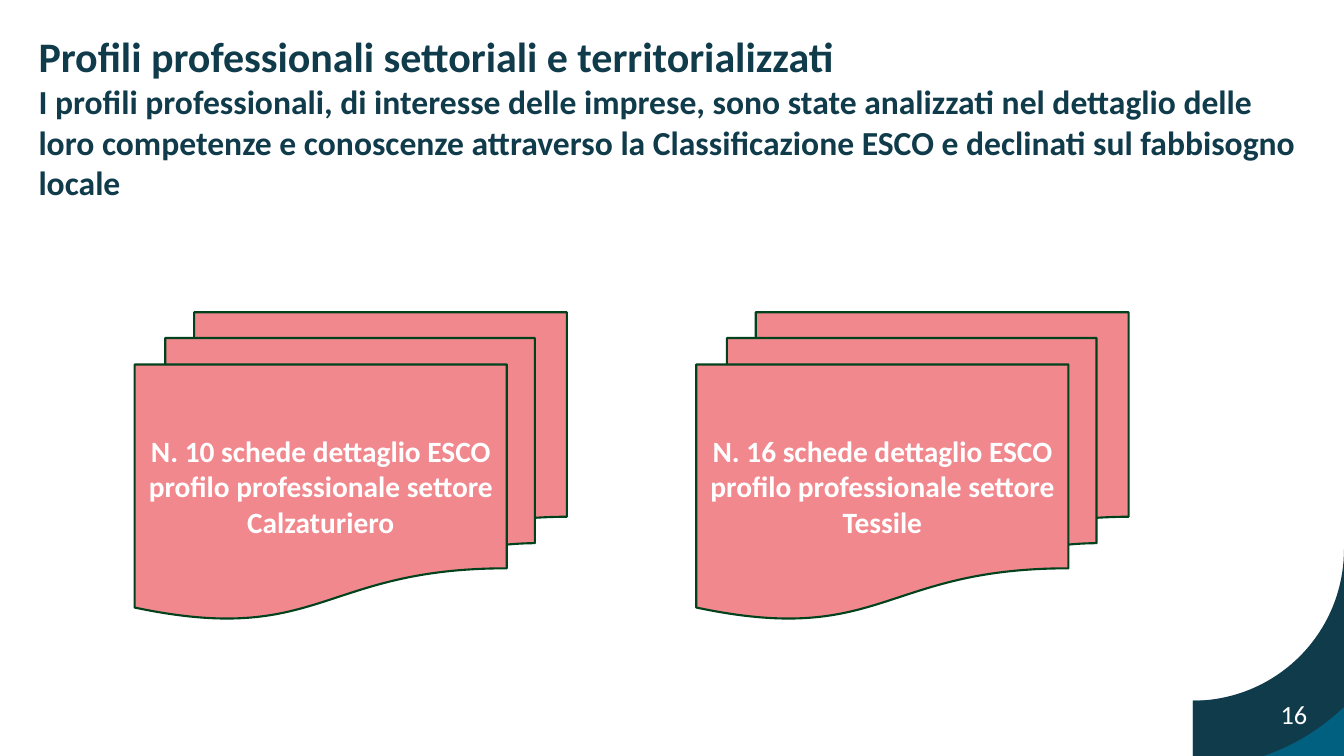
import math
from dataclasses import dataclass

import pptx
import pptx.dml.color
import pptx.enum.shapes
import pptx.enum.text
import pptx.util

Pt = pptx.util.Pt
SHAPES = pptx.enum.shapes.MSO_SHAPE
ALIGN = pptx.enum.text.PP_ALIGN
ANCHOR = pptx.enum.text.MSO_ANCHOR

PAGE_WIDTH, PAGE_HEIGHT = 1280.16, 720


@dataclass(frozen=True)
class Theme:
    font: str = "Calibri"
    navy: str = "103B4B"
    blue: str = "015F80"
    pink: str = "F1888E"
    green: str = "00421C"
    white: str = "FFFFFF"
    title_size: int = 40
    subtitle_size: int = 32
    card_size: int = 28
    number_size: int = 25
    outline: int = 2


THEME = Theme()


def rgb(value):
    return pptx.dml.color.RGBColor.from_string(value)


def paint(shape, fill, line=None):
    shape.shadow.inherit = False
    shape.fill.solid()
    shape.fill.fore_color.rgb = rgb(fill)
    if line:
        shape.line.color.rgb = rgb(line)
        shape.line.width = Pt(THEME.outline)
    else:
        shape.line.fill.background()


def write_para(para, text, size, color, bold=False, align=ALIGN.LEFT):
    para.text = text
    para.alignment = align
    para.font.name = THEME.font
    para.font.size = Pt(size)
    para.font.bold = bold
    para.font.color.rgb = rgb(color)


def add_text_box(page, left, top, width, height):
    box = page.shapes.add_textbox(Pt(left), Pt(top), Pt(width), Pt(height))
    frame = box.text_frame
    frame.word_wrap = True
    frame.margin_left = frame.margin_right = 0
    frame.margin_top = frame.margin_bottom = 0
    return frame


def add_card_stack(page, left, text):
    stack = page.shapes.add_shape(
        SHAPES.FLOWCHART_MULTIDOCUMENT, Pt(left), Pt(297.4), Pt(411.8), Pt(292.3))
    paint(stack, THEME.pink, THEME.green)
    frame = stack.text_frame
    frame.word_wrap = True
    frame.vertical_anchor = ANCHOR.MIDDLE
    write_para(frame.paragraphs[0], text, THEME.card_size, THEME.white, True, ALIGN.CENTER)


def arc_points(center_x, center_y, radius, start, end, steps=40):
    """Points on a circle, with angles in radians clockwise from the right."""
    angles = [start + (end - start) * step / steps for step in range(steps + 1)]
    return [(Pt(center_x + radius * math.cos(angle)),
             Pt(center_y + radius * math.sin(angle))) for angle in angles]


def add_corner(page):
    radius, outer_radius = 144, 207.8
    left, center_y = PAGE_WIDTH - radius, 523.4
    base_top = center_y + radius

    # Blue base
    base = page.shapes.add_shape(
        SHAPES.RECTANGLE, Pt(left), Pt(base_top), Pt(radius), Pt(PAGE_HEIGHT - base_top))
    paint(base, THEME.blue)

    # Navy band between two concentric arcs, cut by the page edges
    bottom_angle = math.asin((PAGE_HEIGHT - center_y) / outer_radius)
    right_angle = math.acos(radius / outer_radius)
    points = arc_points(left, center_y, radius, 0, math.pi / 2)
    points.append((Pt(left), Pt(PAGE_HEIGHT)))
    points += arc_points(left, center_y, outer_radius, bottom_angle, right_angle)
    builder = page.shapes.build_freeform(*points[0])
    builder.add_line_segments(points[1:], close=True)
    paint(builder.convert_to_shape(), THEME.navy)


def add_heading(page, title, subtitle):
    frame = add_text_box(page, 36.7, 29.5, 1199.5, 310)
    write_para(frame.paragraphs[0], title, THEME.title_size, THEME.navy, True)
    write_para(frame.add_paragraph(), subtitle, THEME.subtitle_size, THEME.navy, True)


def add_page_number(page, number):
    frame = add_text_box(page, 1219.7, 664.6, 32.4, 31)
    frame.margin_top = Pt(0.7)
    para = frame.paragraphs[0]
    write_para(para, number, THEME.number_size, THEME.white)
    para.space_before = Pt(1)


def main():
    deck = pptx.Presentation()
    deck.slide_width, deck.slide_height = Pt(PAGE_WIDTH), Pt(PAGE_HEIGHT)
    page = deck.slides.add_slide(deck.slide_layouts[6])

    # Corner decoration and heading
    add_corner(page)
    add_heading(
        page,
        "Profili professionali settoriali e territorializzati",
        "I profili professionali, di interesse delle imprese, sono state analizzati nel "
        "dettaglio delle loro competenze e conoscenze attraverso la Classificazione ESCO "
        "e declinati sul fabbisogno locale")
    add_page_number(page, "16")

    # One stack of cards for each sector
    for index, (count, sector) in enumerate([(10, "Calzaturiero"), (16, "Tessile")]):
        text = f"N. {count} schede dettaglio ESCO profilo professionale settore {sector}"
        add_card_stack(page, 128.2 + index * 535, text)

    deck.save("out.pptx")


if __name__ == "__main__":
    main()
